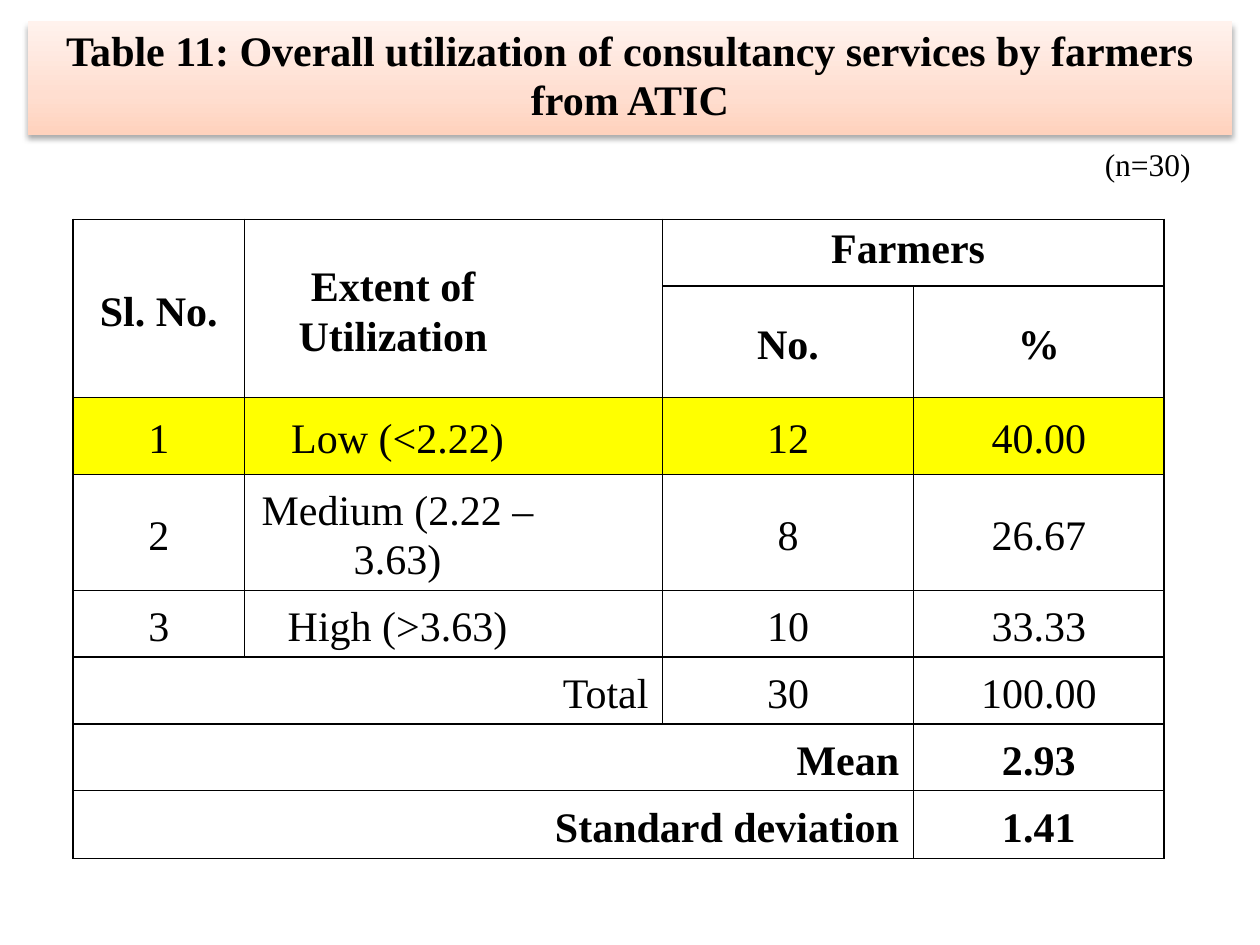
import pptx
import pptx.util
import pptx.dml.color
import pptx.enum.text
import pptx.enum.shapes
import pptx.oxml
import pptx.oxml.ns

Inch = pptx.util.Inches
Pt = pptx.util.Pt
Align = pptx.enum.text.PP_ALIGN
Anchor = pptx.enum.text.MSO_ANCHOR
BLACK = pptx.dml.color.RGBColor(0, 0, 0)
YELLOW = pptx.dml.color.RGBColor(255, 255, 0)
FADE = [(0, pptx.dml.color.RGBColor(0xFF, 0xD2, 0xBD)),
        (35, pptx.dml.color.RGBColor(0xFF, 0xDE, 0xD0)),
        (100, pptx.dml.color.RGBColor(0xFF, 0xF2, 0xED))]
SPACE = pptx.oxml.ns.nsdecls("a")


def write(para, text, size, bold, align, line=None):
    para.alignment = align
    if line:
        para.line_spacing = line
        para.space_after = Pt(8)
    run = para.add_run()
    run.text = text
    run.font.name = "Times New Roman"
    run.font.size = Pt(size)
    run.font.bold = bold
    run.font.color.rgb = BLACK


def edge(cell, side, shown):
    paint = f'<a:solidFill><a:srgbClr val="{BLACK}"/></a:solidFill>' if shown else "<a:noFill/>"
    cell._tc.get_or_add_tcPr().append(pptx.oxml.parse_xml(
        f'<a:ln{side} {SPACE} w="{Pt(1)}">{paint}</a:ln{side}>'))


deck = pptx.Presentation()
deck.slide_width = Inch(10)
deck.slide_height = Inch(7.5)
slide = deck.slides.add_slide(deck.slide_layouts[6])
shapes = slide.shapes

title = shapes.add_shape(pptx.enum.shapes.MSO_SHAPE.RECTANGLE,
                         Inch(0.22), Inch(0.17), Inch(9.56), Inch(0.9))
stops = "".join(f'<a:gs pos="{pos * 1000}"><a:srgbClr val="{tone}"/></a:gs>' for pos, tone in FADE)
props = title._element.spPr
props.append(pptx.oxml.parse_xml(
    f'<a:gradFill {SPACE}><a:gsLst>{stops}</a:gsLst><a:lin ang="16200000" scaled="0"/></a:gradFill>'))
title.line.fill.background()
props.append(pptx.oxml.parse_xml(
    f'<a:effectLst {SPACE}><a:outerShdw blurRad="{Pt(3.5)}" dist="{Pt(2.2)}" dir="5400000" rotWithShape="0">'
    f'<a:srgbClr val="{BLACK}"><a:alpha val="32000"/></a:srgbClr></a:outerShdw></a:effectLst>'))
frame = title.text_frame
frame.word_wrap = True
frame.vertical_anchor = Anchor.TOP
write(frame.paragraphs[0],
      "Table 11: Overall utilization of consultancy services by farmers from ATIC",
      24, True, Align.CENTER, 0.97)

note = shapes.add_textbox(Inch(8.67), Inch(1.1), Inch(1), Inch(0.4)).text_frame
note.word_wrap = True
note.auto_size = pptx.enum.text.MSO_AUTO_SIZE.SHAPE_TO_FIT_TEXT
write(note.paragraphs[0], "(n=30)", 18, False, Align.LEFT)

WIDTHS = [1.36, 2.39, 0.93, 1.99, 1.99]
HEIGHTS = [0.53, 0.54, 0.61, 0.92, 0.53, 0.53, 0.53, 0.54]
ROWS = [
    ["Sl. No.", "Extent of Utilization", "", "Farmers ", ""],
    ["", "", "", "No.", "%"],
    ["1", "Low (<2.22)", "", "12", "40.00"],
    ["2", "Medium (2.22 – 3.63)", "", "8", "26.67"],
    ["3", "High (>3.63)", "", "10", "33.33"],
    ["", "", "Total ", "30", "100.00"],
    ["", "", "Mean ", "", "2.93"],
    ["", "", "Standard deviation ", "", "1.41"],
]
table = shapes.add_table(len(ROWS), len(WIDTHS), Inch(0.58), Inch(1.74),
                         Inch(sum(WIDTHS)), Inch(sum(HEIGHTS))).table
table.first_row = False
table.horz_banding = False
for col, width in zip(table.columns, WIDTHS):
    col.width = Inch(width)
for row, height in zip(table.rows, HEIGHTS):
    row.height = Inch(height)

for col in range(3):
    table.cell(0, col).merge(table.cell(1, col))
table.cell(0, 3).merge(table.cell(0, 4))
for row in (6, 7):
    table.cell(row, 2).merge(table.cell(row, 3))

for row, texts in enumerate(ROWS):
    total = row >= 5
    for col, text in enumerate(texts):
        cell = table.cell(row, col)
        edge(cell, "L", col != 2 and not (total and col == 1))
        edge(cell, "R", col != 1 and not (total and col == 0))
        edge(cell, "T", True)
        edge(cell, "B", True)
        if row == 2:
            cell.fill.solid()
            cell.fill.fore_color.rgb = YELLOW
        else:
            cell.fill.background()
        if not text:
            continue
        cell.margin_left = cell.margin_bottom = 0
        cell.margin_top = cell.margin_right = Inch(0.03)
        cell.vertical_anchor = Anchor.TOP if text == "Farmers " else Anchor.MIDDLE
        para = cell.text_frame.paragraphs[0]
        write(para, text, 24, row < 2 or row > 5,
              Align.RIGHT if col == 2 else Align.CENTER, 1.07)
        if col == 1:
            indent = 0.07 if row else 0
        elif col == 2:
            indent = 0.06 if row == 5 else 0
        else:
            indent = 0.03
        para._p.get_or_add_pPr().set("marL", str(Inch(indent)))
        para._p.get_or_add_pPr().set("indent", "0")

deck.save("out.pptx")
